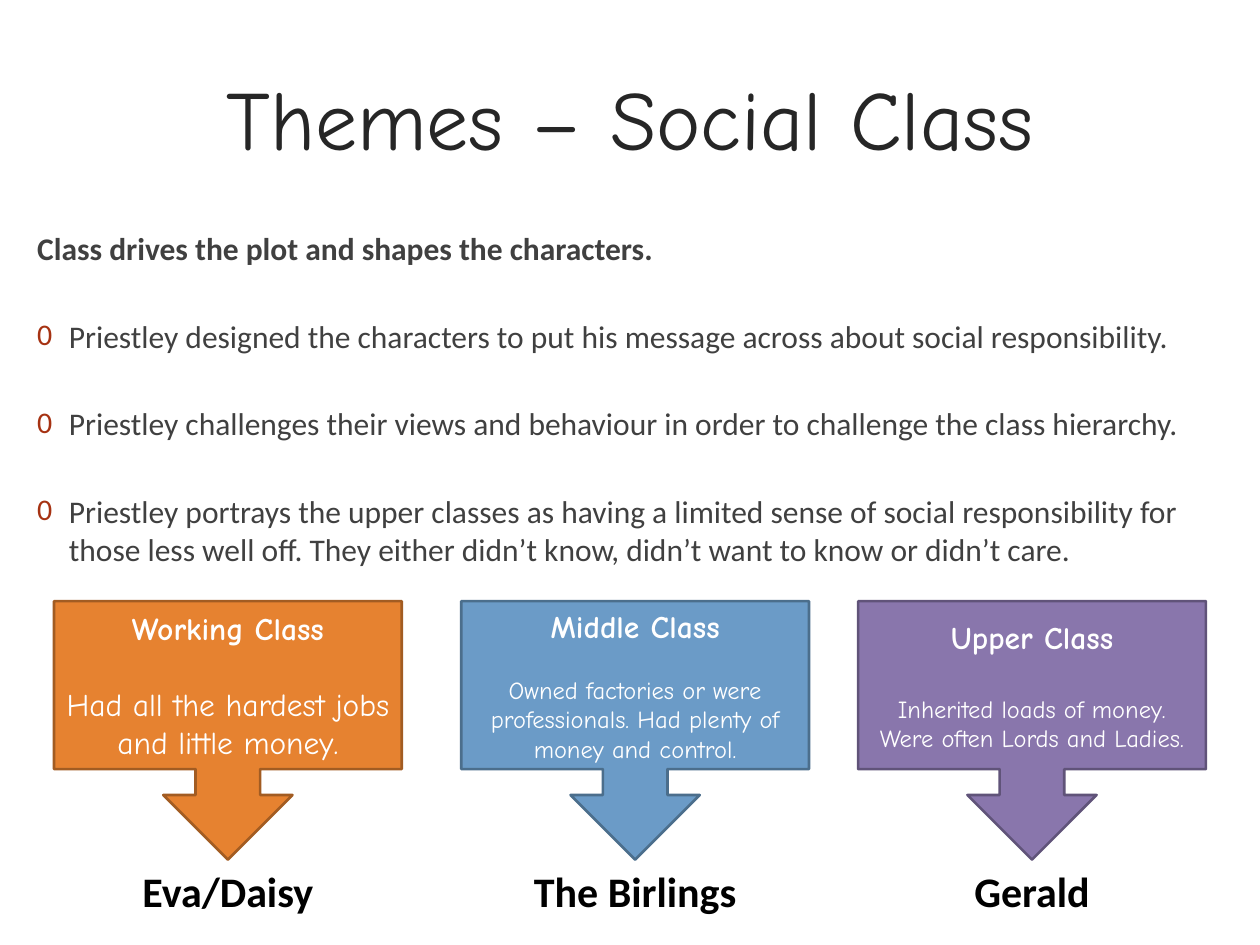
import pptx
import pptx.util
import pptx.dml.color
import pptx.enum.shapes
import pptx.enum.text
import pptx.oxml.ns
from lxml import etree

Cm, Pt = pptx.util.Cm, pptx.util.Pt
RGBColor = pptx.dml.color.RGBColor
ALIGN = pptx.enum.text.PP_ALIGN
ANCHOR = pptx.enum.text.MSO_ANCHOR

TITLE = RGBColor(0x26, 0x26, 0x26)
BODY = RGBColor(0x40, 0x40, 0x40)
WHITE = RGBColor(0xFF, 0xFF, 0xFF)
BLACK = RGBColor(0, 0, 0)
ORANGE, ORANGE_EDGE = RGBColor(0xE6, 0x82, 0x30), RGBColor(0xA2, 0x5C, 0x22)
BLUE, BLUE_EDGE = RGBColor(0x6B, 0x9B, 0xC7), RGBColor(0x4B, 0x6E, 0x8C)
PURPLE, PURPLE_EDGE = RGBColor(0x89, 0x76, 0xAC), RGBColor(0x60, 0x53, 0x79)
BULLET = "A63212"
HAND, PLAIN = "Comic Neue", "Calibri"

POINTS = [
    "Priestley designed the characters to put his message across about social responsibility.",
    "Priestley challenges their views and behaviour in order to challenge the class hierarchy.",
    "Priestley portrays the upper classes as having a limited sense of social responsibility "
    "for those less well off. They either didn’t know, didn’t want to know or didn’t care.",
]
# left, heading, description, description size, gap, character, fill, edge
CLASSES = [
    (1.09, "Working Class", "Had all the hardest jobs and little money.",
     18, 21.7, "Eva/Daisy", ORANGE, ORANGE_EDGE),
    (9.3, "Middle Class",
     "Owned factories or were professionals. Had plenty of money and control.",
     14, 16.9, "The Birlings", BLUE, BLUE_EDGE),
    (17.3, "Upper Class", "Inherited loads of money. Were often Lords and Ladies.",
     14, 21.7, "Gerald", PURPLE, PURPLE_EDGE),
]


def add_bullet(p):
    """Hang a coloured "0" in front of the paragraph."""
    pPr = p._p.get_or_add_pPr()
    pPr.set("marL", str(Cm(0.64)))
    pPr.set("indent", str(-Cm(0.64)))
    qn = pptx.oxml.ns.qn
    color = etree.SubElement(pPr, qn("a:buClr"))
    etree.SubElement(color, qn("a:srgbClr"), val=BULLET)
    etree.SubElement(pPr, qn("a:buSzPct"), val="95000")
    etree.SubElement(pPr, qn("a:buFont"), typeface=PLAIN)
    etree.SubElement(pPr, qn("a:buChar"), char="0")


def add_text(tf, text, size, color, font=PLAIN, bold=False,
             align=ALIGN.CENTER, before=0, bullet=False):
    """Fill the empty first paragraph, or append a new one."""
    p = tf.paragraphs[0]
    if p.runs:
        p = tf.add_paragraph()
    p.alignment = align
    if before:
        p.space_before = Pt(before)
    if bullet:
        add_bullet(p)
    r = p.add_run()
    r.text = text
    r.font.name, r.font.size, r.font.bold = font, Pt(size), bold
    r.font.color.rgb = color


def add_box(slide, x, y, w, h, anchor=ANCHOR.TOP):
    tf = slide.shapes.add_textbox(Cm(x), Cm(y), Cm(w), Cm(h)).text_frame
    tf.word_wrap = True
    tf.vertical_anchor = anchor
    return tf


def add_title(slide, x, y, w, h):
    tf = add_box(slide, x, y, w, h, ANCHOR.MIDDLE)
    add_text(tf, "Themes – Social Class", 48, TITLE, HAND)


def add_body(slide, x, y, w, h):
    tf = add_box(slide, x, y, w, h)
    add_text(tf, "Class drives the plot and shapes the characters.", 18, BODY,
             bold=True, align=ALIGN.LEFT)
    for point in POINTS:
        add_text(tf, point, 18, BODY, align=ALIGN.LEFT, before=28.4, bullet=True)


def add_class(slide, x, y, w, h, heading, description, size, gap, character, fill, edge):
    # Callout pointing down
    callout_h = h - 1.3
    sp = slide.shapes.add_shape(pptx.enum.shapes.MSO_SHAPE.DOWN_ARROW_CALLOUT,
                                Cm(x), Cm(y), Cm(w), Cm(callout_h))
    sp.shadow.inherit = False
    sp.fill.solid()
    sp.fill.fore_color.rgb = fill
    sp.line.color.rgb = edge
    sp.line.width = Pt(1.5)
    tf = sp.text_frame
    tf.word_wrap = True
    tf.vertical_anchor = ANCHOR.MIDDLE
    add_text(tf, heading, 18, WHITE, HAND, bold=True)
    add_text(tf, description, size, WHITE, HAND, before=gap)
    # Character below the arrow
    add_text(add_box(slide, x, y + callout_h, w, 1.3), character, 24, BLACK, bold=True)


def main():
    prs = pptx.Presentation()
    prs.slide_width, prs.slide_height = Cm(25.4), Cm(19.05)
    slide = prs.slides.add_slide(prs.slide_layouts[6])
    add_title(slide, 0, 0.76, 25.4, 3.18)
    add_body(slide, 0.5, 4.5, 24.4, 7.5)
    for left, *details in CLASSES:
        add_class(slide, left, 12.12, 7.01, 6.51, *details)
    prs.save("out.pptx")


if __name__ == "__main__":
    main()
